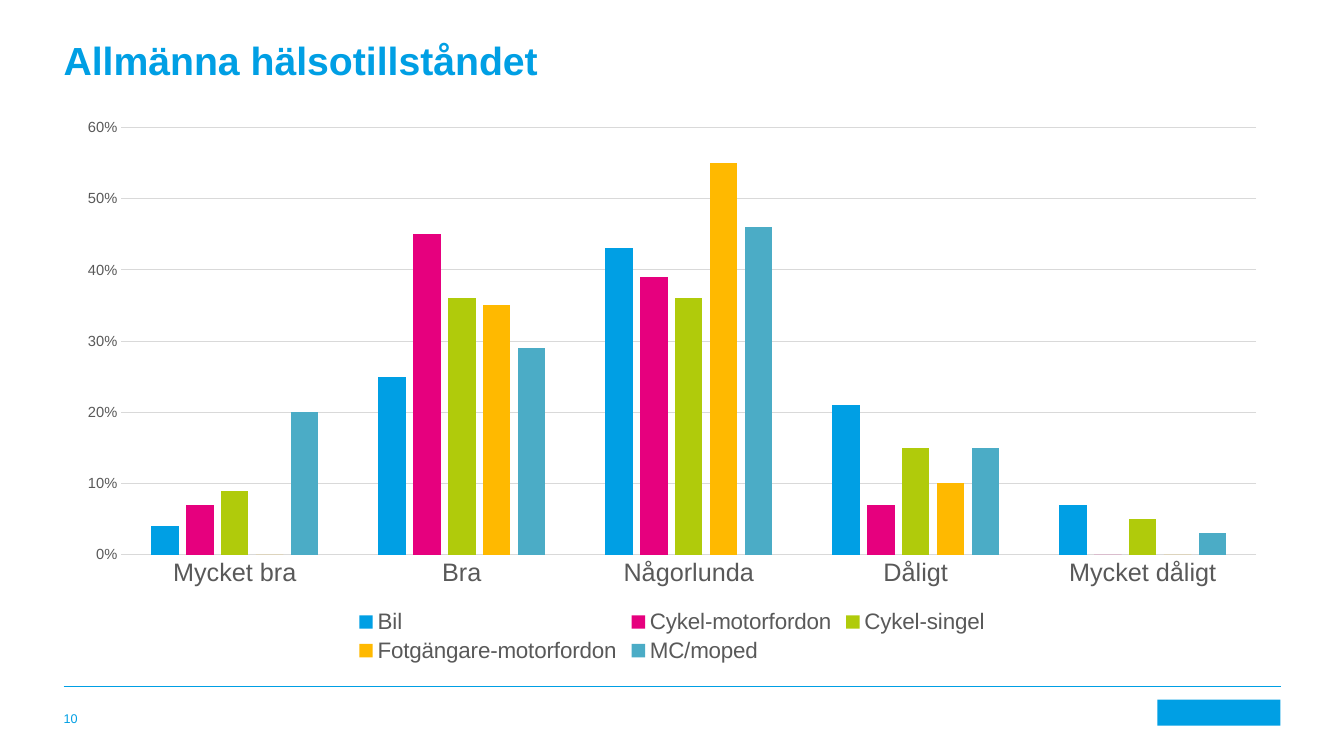
"""Build a slide with a clustered column chart of general health by road user."""
from lxml.etree import SubElement
from pptx import Presentation
from pptx.chart.data import CategoryChartData as Data
from pptx.dml.color import RGBColor
from pptx.enum.chart import XL_CHART_TYPE as Kind, XL_LEGEND_POSITION as Side, XL_TICK_MARK as Tick
from pptx.enum.shapes import MSO_CONNECTOR as Link, MSO_SHAPE as Form
from pptx.enum.text import MSO_ANCHOR as Anchor, MSO_AUTO_SIZE as Fit, PP_ALIGN as Align
from pptx.oxml.ns import qn
from pptx.util import Inches, Pt

WIDE, HIGH = Inches(13.33), Inches(7.5)
LEFT, SPAN = 4.73, 90.55
RULE, FOOT, BAND = 90.8, 92.53, 3.47
BLUE, GREY, PALE = "009FE4", "595959", "D9D9D9"
FACE = "Arial"
CATS = ["Mycket bra", "Bra", "Någorlunda", "Dåligt", "Mycket dåligt"]
ROWS = [
    ("Bil", BLUE, [0.04, 0.25, 0.43, 0.21, 0.07]),
    ("Cykel-motorfordon", "E6007E", [0.07, 0.45, 0.39, 0.07, 0]),
    ("Cykel-singel", "B0CB0B", [0.09, 0.36, 0.36, 0.15, 0.05]),
    ("Fotgängare-motorfordon", "FFB900", [0, 0.35, 0.55, 0.1, 0]),
    ("MC/moped", "4BACC6", [0.2, 0.29, 0.46, 0.15, 0.03]),
]


def area(x, y, w, h):
    """Turn percentages of the slide into left, top, width and height."""
    return [int(part * size / 100) for part, size in zip((x, y, w, h), (WIDE, HIGH) * 2)]


def paint(thing, tint):
    """Give a fill a solid colour, or a font or line its colour."""
    if hasattr(thing, "solid"):
        thing.solid()
        thing = thing.fore_color
    else:
        thing = thing.color
    thing.rgb = RGBColor.from_string(tint)


def style(font, size, tint, bold=False):
    """Set the face, size, colour and weight of a font."""
    font.name, font.size, font.bold = FACE, Pt(size), bold
    paint(font, tint)


def stroke(line, tint, width):
    """Set the colour and width of a line."""
    paint(line, tint)
    line.width = Pt(width)


def write(shape, box, text, size, anchor, bold=False):
    """Place a shape and fill it with one left-aligned run."""
    shape.left, shape.top, shape.width, shape.height = area(*box)
    frame = shape.text_frame
    frame.auto_size, frame.word_wrap = Fit.NONE, True
    frame.vertical_anchor = anchor
    frame.margin_left = frame.margin_right = frame.margin_top = frame.margin_bottom = 0
    para = frame.paragraphs[0]
    para.alignment = Align.LEFT
    run = para.add_run()
    run.text = text
    style(run.font, size, BLUE, bold)


def rule(slide):
    """Draw the thin line above the footer."""
    x, y, w, _ = area(LEFT, RULE, SPAN, 0)
    line = slide.shapes.add_connector(Link.STRAIGHT, x, y, x + w, y)
    stroke(line.line, BLUE, 0.5)
    SubElement(line._element.spPr, qn("a:effectLst"))


def badge(slide):
    """Draw a plain block at the right end of the footer."""
    block = slide.shapes.add_shape(Form.RECTANGLE, *area(86.12, FOOT, 9.15, BAND))
    block.shadow.inherit = False
    paint(block.fill, BLUE)
    block.line.fill.background()


def axes(chart):
    """Format the category and value axes."""
    cat, val = chart.category_axis, chart.value_axis
    for axis, size in ((cat, 18), (val, 10.5)):
        axis.major_tick_mark = axis.minor_tick_mark = Tick.NONE
        style(axis.tick_labels.font, size, GREY)
    stroke(cat.format.line, PALE, 0.75)
    val.format.line.fill.background()
    val.has_major_gridlines = True
    stroke(val.major_gridlines.format.line, PALE, 0.75)
    val.minimum_scale, val.maximum_scale, val.major_unit = 0, 0.6, 0.1
    val.tick_labels.number_format = "0%"
    val.tick_labels.number_format_is_linked = False


def graph(slide):
    """Add the column chart with its legend below."""
    data = Data(number_format="0%")
    data.categories = CATS
    for name, _, vals in ROWS:
        data.add_series(name, vals)
    box = area(LEFT, 14.27, SPAN, 74)
    chart = slide.shapes.add_chart(Kind.COLUMN_CLUSTERED, *box, data).chart
    style(chart.font, 10, "000000")
    chart.has_title = False
    chart.has_legend = True
    chart.legend.position = Side.BOTTOM
    chart.legend.include_in_layout = False
    style(chart.legend.font, 16, GREY)
    plot = chart.plots[0]
    plot.gap_width, plot.overlap, plot.vary_by_categories = 219, -27, False
    for bars, (_, tint, _) in zip(plot.series, ROWS):
        paint(bars.format.fill, tint)
        bars.invert_if_negative = False
    axes(chart)


def main():
    """Build the slide and save it."""
    deck = Presentation()
    deck.slide_width, deck.slide_height = WIDE, HIGH
    slide = deck.slides.add_slide(deck.slide_layouts[5])
    rule(slide)
    badge(slide)
    write(slide.shapes.title, (LEFT, 4.8, SPAN, 22), "Allmänna hälsotillståndet", 28, Anchor.TOP, True)
    page = slide.shapes.add_textbox(0, 0, 0, 0)
    write(page, (LEFT, FOOT, 4.35, BAND), "10", 9, Anchor.BOTTOM)
    graph(slide)
    deck.save("out.pptx")


if __name__ == "__main__":
    main()
